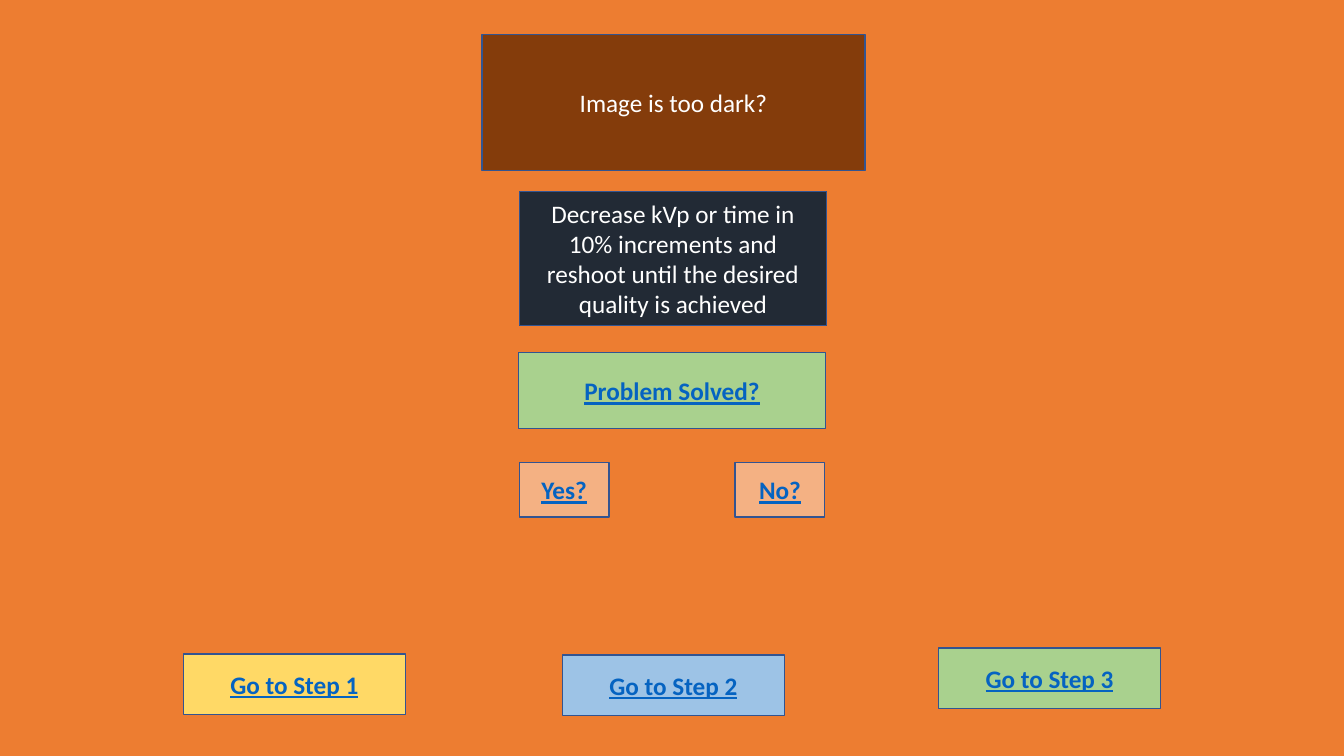
from pptx import Presentation
from pptx.dml.color import RGBColor
from pptx.enum.shapes import MSO_SHAPE
from pptx.enum.text import MSO_ANCHOR, PP_ALIGN
from pptx.util import Inches, Pt

ORANGE = RGBColor(0xED, 0x7D, 0x31)
BROWN = RGBColor(0x84, 0x3C, 0x0B)
NAVY = RGBColor(0x22, 0x2A, 0x35)
GREEN = RGBColor(0xA9, 0xD1, 0x8E)
PEACH = RGBColor(0xF4, 0xB1, 0x83)
YELLOW = RGBColor(0xFF, 0xD9, 0x66)
LIGHT_BLUE = RGBColor(0x9D, 0xC3, 0xE6)
OUTLINE = RGBColor(0x32, 0x54, 0x91)
LINK_BLUE = RGBColor(0x05, 0x63, 0xC1)
WHITE = RGBColor(0xFF, 0xFF, 0xFF)

presentation = Presentation()
presentation.slide_width = Inches(13.33)
presentation.slide_height = Inches(7.5)
slide = presentation.slides.add_slide(presentation.slide_layouts[6])
slide.background.fill.solid()
slide.background.fill.fore_color.rgb = ORANGE


def add_box(kind, text, left, top, width, height, fill, is_link=True):
    shape = slide.shapes.add_shape(
        kind, Inches(left), Inches(top), Inches(width), Inches(height))
    shape.shadow.inherit = False
    shape.fill.solid()
    shape.fill.fore_color.rgb = fill
    shape.line.color.rgb = OUTLINE
    shape.line.width = Pt(1)
    frame = shape.text_frame
    frame.word_wrap = True
    frame.vertical_anchor = MSO_ANCHOR.MIDDLE
    paragraph = frame.paragraphs[0]
    paragraph.text = text
    paragraph.alignment = PP_ALIGN.CENTER
    font = paragraph.font
    font.name = "Calibri"
    font.size = Pt(18)
    font.color.rgb = LINK_BLUE if is_link else WHITE
    font.bold = is_link
    font.underline = is_link


# Problem and remedy
PROCESS = MSO_SHAPE.FLOWCHART_PROCESS
add_box(PROCESS, "Image is too dark?", 4.78, 0.34, 3.8, 1.35, BROWN, is_link=False)
add_box(PROCESS,
        "Decrease kVp or time in 10% increments and reshoot until the desired quality is achieved",
        5.15, 1.9, 3.05, 1.33, NAVY, is_link=False)

# Question and its answers
add_box(PROCESS, "Problem Solved?", 5.14, 3.5, 3.05, 0.75, GREEN)
for answer, left in (("Yes?", 5.15), ("No?", 7.29)):
    add_box(PROCESS, answer, left, 4.59, 0.89, 0.54, PEACH)

# Step buttons
step_buttons = ((1.82, 6.49, YELLOW), (5.58, 6.5, LIGHT_BLUE), (9.31, 6.43, GREEN))
for number, (left, top, fill) in enumerate(step_buttons, start=1):
    add_box(MSO_SHAPE.RECTANGLE, f"Go to Step {number}", left, top, 2.2, 0.6, fill)

presentation.save("out.pptx")
